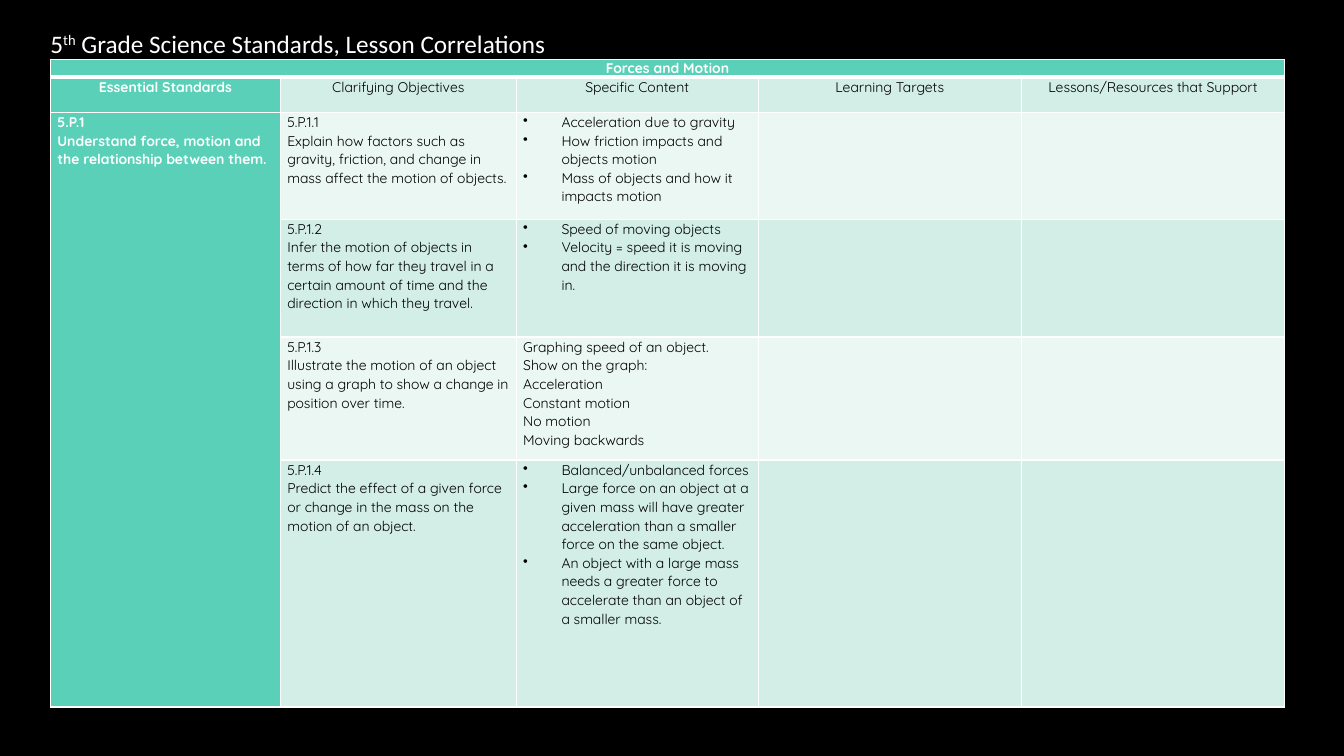
from dataclasses import dataclass

from lxml import etree
from pptx import Presentation
from pptx.dml.color import RGBColor
from pptx.enum.text import MSO_ANCHOR, PP_ALIGN
from pptx.oxml.ns import qn
from pptx.util import Inches, Pt

CENTER, LEFT = PP_ALIGN.CENTER, PP_ALIGN.LEFT
TOP = MSO_ANCHOR.TOP


@dataclass(frozen=True)
class Theme:
    background: str = "000000"
    accent: str = "5AD0B8"
    band_dark: str = "D2EEE6"
    band_light: str = "EAF7F3"
    light_text: str = "FFFFFF"
    dark_text: str = "000000"
    border: str = "FFFFFF"
    title_font: str = "Calibri"
    table_font: str = "Quicksand"
    title_size: float = 18
    table_size: float = 10
    line_spacing: float = 1.07
    thin: float = 1
    thick: float = 3


THEME = Theme()

TITLE_BOX = (0.5, 0.28, 12.25, 0.3)
TABLE_BOX = (0.5, 0.59, 12.25, 6.42)
COLUMN_WIDTHS = (2.28, 2.34, 2.4, 2.61, 2.61)
ROW_HEIGHTS = (0.17, 0.35, 1.06, 1.17, 1.22, 2.45)
CELL_MARGINS = {"margin_left": Inches(0.07), "margin_right": Inches(0.07),
                "margin_top": 0, "margin_bottom": 0}
BULLET_INDENT = Inches(0.38)

TITLE_PARTS = (("5", False), ("th", True),
               (" Grade Science Standards, Lesson Correlations", False))
UNIT = "Forces and Motion"
HEADINGS = ("Essential Standards", "Clarifying Objectives", "Specific Content",
            "Learning Targets", "Lessons/Resources that Support")
STANDARD = ("5.P.1", "Understand force, motion and the relationship between them.")
# Each objective: code, description, whether its content is bulleted, content
OBJECTIVES = (
    ("5.P.1.1",
     "Explain how factors such as gravity, friction, and change in mass affect "
     "the motion of objects.",
     True,
     ("Acceleration due to gravity",
      "How friction impacts and objects motion",
      "Mass of objects and how it impacts motion")),
    ("5.P.1.2",
     "Infer the motion of objects in terms of how far they travel in a certain "
     "amount of time and the direction in which they travel.",
     True,
     ("Speed of moving objects",
      "Velocity = speed it is moving and the direction it is moving in.")),
    ("5.P.1.3",
     "Illustrate the motion of an object using a graph to show a change in "
     "position over time.",
     False,
     ("Graphing speed of an object.", "Show on the graph:", "Acceleration",
      "Constant motion", "No motion", "Moving backwards")),
    ("5.P.1.4",
     "Predict the effect of a given force or change in the mass on the motion "
     "of an object.",
     True,
     ("Balanced/unbalanced forces",
      "Large force on an object at a given mass will have greater acceleration "
      "than a smaller force on the same object.",
      "An object with a large mass needs a greater force to accelerate than an "
      "object of a smaller mass.")),
)


def set_attributes(target, values):
    for name, value in values.items():
        setattr(target, name, value)


def add_run(paragraph, text, color, **font_values):
    run = paragraph.add_run()
    run.text = text
    set_attributes(run.font, font_values)
    run.font.color.rgb = RGBColor.from_string(color)
    return run


def add_bullet(paragraph):
    properties = paragraph._p.get_or_add_pPr()
    properties.set("marL", str(BULLET_INDENT))
    properties.set("indent", str(-BULLET_INDENT))
    etree.SubElement(properties, qn("a:buChar")).set("char", "•")


def add_borders(cell, **widths):
    """Draw the four cell edges; widths overrides single edges by letter."""
    properties = cell._tc.get_or_add_tcPr()
    for edge in "LRTB":
        line = etree.SubElement(properties, qn(f"a:ln{edge}"))
        line.set("w", str(Pt(widths.get(edge, THEME.thin))))
        fill = etree.SubElement(line, qn("a:solidFill"))
        etree.SubElement(fill, qn("a:srgbClr")).set("val", THEME.border)


def paint_cell(cell, color, **border_widths):
    set_attributes(cell, CELL_MARGINS)
    add_borders(cell, **border_widths)
    cell.fill.solid()
    cell.fill.fore_color.rgb = RGBColor.from_string(color)


def write_cell(cell, lines, color=THEME.dark_text, bold=False, alignment=LEFT,
               bulleted=False, spacing=THEME.line_spacing):
    frame = cell.text_frame
    for index, text in enumerate(lines):
        paragraph = frame.add_paragraph() if index else frame.paragraphs[0]
        set_attributes(paragraph, {"alignment": alignment, "line_spacing": spacing})
        if bulleted:
            add_bullet(paragraph)
        add_run(paragraph, text, color, name=THEME.table_font,
                size=Pt(THEME.table_size), bold=bold)


def add_title(slide, box):
    frame = slide.shapes.add_textbox(*map(Inches, box)).text_frame
    set_attributes(frame, {"word_wrap": True, "vertical_anchor": TOP,
                           "margin_left": 0, "margin_right": 0,
                           "margin_top": 0, "margin_bottom": 0})
    for text, raised in TITLE_PARTS:
        run = add_run(frame.paragraphs[0], text, THEME.light_text,
                      name=THEME.title_font, size=Pt(THEME.title_size))
        if raised:
            run._r.get_or_add_rPr().set("baseline", "30000")


def add_standards_table(slide, box):
    table = slide.shapes.add_table(len(ROW_HEIGHTS), len(COLUMN_WIDTHS),
                                   *map(Inches, box)).table
    for column, width in zip(table.columns, COLUMN_WIDTHS):
        column.width = Inches(width)
    for row, height in zip(table.rows, ROW_HEIGHTS):
        row.height = Inches(height)

    for row_index in range(len(ROW_HEIGHTS)):
        band = THEME.band_dark if row_index % 2 else THEME.band_light
        widths = {0: {"B": THEME.thick}, 1: {"T": THEME.thick}}.get(row_index, {})
        for column_index in range(len(COLUMN_WIDTHS)):
            accented = row_index == 0 or column_index == 0
            paint_cell(table.cell(row_index, column_index),
                       THEME.accent if accented else band, **widths)

    table.cell(0, 0).merge(table.cell(0, len(COLUMN_WIDTHS) - 1))
    table.cell(2, 0).merge(table.cell(len(ROW_HEIGHTS) - 1, 0))

    on_accent = {"color": THEME.light_text, "bold": True}
    write_cell(table.cell(0, 0), [UNIT], alignment=CENTER, spacing=1.0, **on_accent)
    for column_index, heading in enumerate(HEADINGS):
        style = {} if column_index else on_accent
        write_cell(table.cell(1, column_index), [heading], alignment=CENTER, **style)
    write_cell(table.cell(2, 0), STANDARD, **on_accent)
    for row_index, (code, description, bulleted, content) in enumerate(OBJECTIVES, 2):
        write_cell(table.cell(row_index, 1), [code, description])
        write_cell(table.cell(row_index, 2), content, bulleted=bulleted)


def main():
    presentation = Presentation()
    presentation.slide_width = Inches(13.33)
    presentation.slide_height = Inches(7.5)
    slide = presentation.slides.add_slide(presentation.slide_layouts[6])
    slide.background.fill.solid()
    slide.background.fill.fore_color.rgb = RGBColor.from_string(THEME.background)
    add_standards_table(slide, TABLE_BOX)
    add_title(slide, TITLE_BOX)
    presentation.save("out.pptx")


if __name__ == "__main__":
    main()
